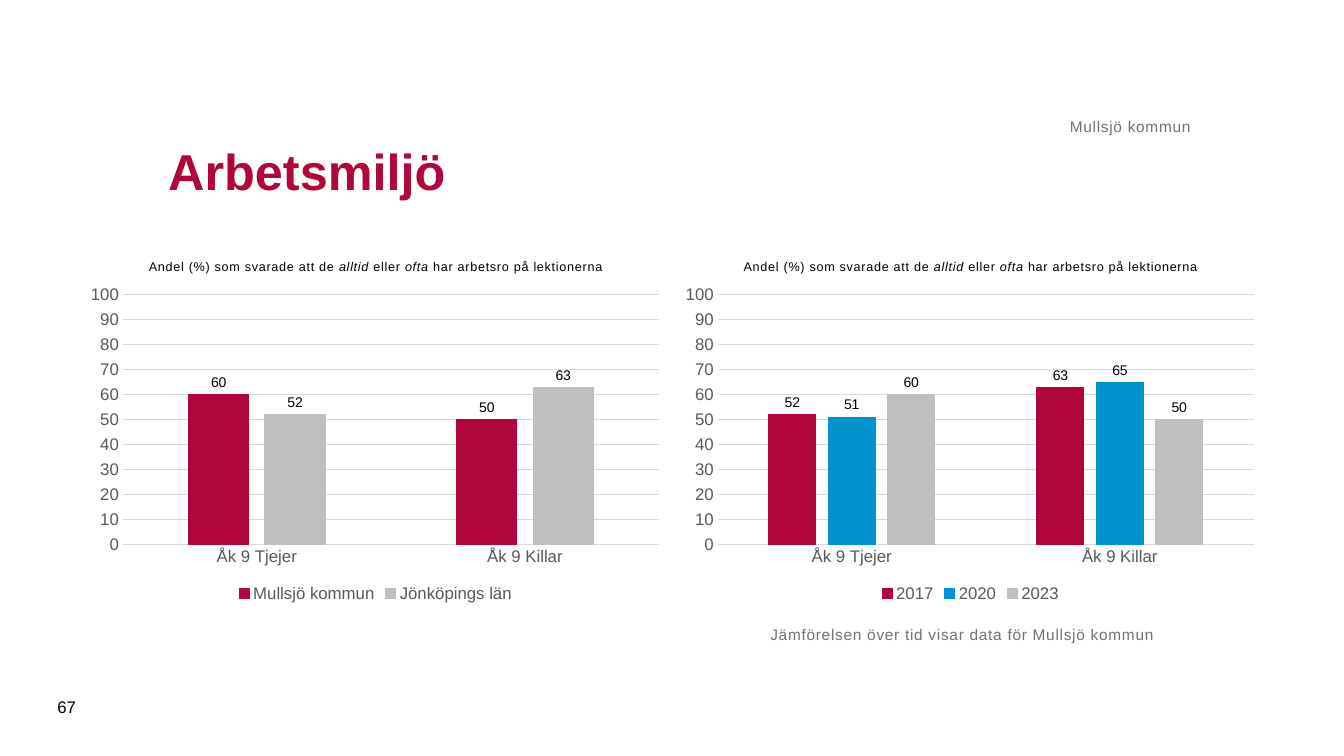
import pptx
import pptx.chart.data
import pptx.dml.color
import pptx.enum.chart
import pptx.enum.text
import pptx.oxml
import pptx.oxml.ns
import pptx.util

Inches, Pt = pptx.util.Inches, pptx.util.Pt
RGB = pptx.dml.color.RGBColor
ALIGN, ANCHOR = pptx.enum.text.PP_ALIGN, pptx.enum.text.MSO_ANCHOR
ENUM = pptx.enum.chart

RED = RGB(0xB1, 0x06, 0x3A)
BLUE = RGB(0x00, 0x93, 0xD0)
SILVER = RGB(0xBF, 0xBF, 0xBF)
GRID = RGB(0xD9, 0xD9, 0xD9)
LABEL = RGB(0x59, 0x59, 0x59)
NOTE = RGB(0x71, 0x71, 0x71)
BLACK = RGB(0, 0, 0)

GROUPS = ["Åk 9 Tjejer", "Åk 9 Killar"]
HEADING = [("Andel (%) som svarade att de ", False), ("alltid", True),
           (" eller ", False), ("ofta", True),
           (" har arbetsro på lektionerna", False)]
PLACES = [("Mullsjö kommun", (60, 50), RED), ("Jönköpings län", (52, 63), SILVER)]
YEARS = [("2017", (52, 63), RED), ("2020", (51, 65), BLUE), ("2023", (60, 50), SILVER)]
FORMAT = "#,##0;#,##0"
PLOT = {"x": 0.073, "y": 0.145, "w": 0.906, "h": 0.684}


def style(font, size, color, bold=False):
    font.name = "Arial"
    font.size = Pt(size)
    font.bold = bold
    font.color.rgb = color


def space(run):
    """Widen the letter spacing by half a point."""
    run._r.get_or_add_rPr().set("spc", "50")


def write(slide, box, text, size, color, bold=False, inset=True, wide=False,
          anchor=ANCHOR.MIDDLE, align=ALIGN.LEFT):
    frame = slide.shapes.add_textbox(*map(Inches, box)).text_frame
    frame.word_wrap = True
    frame.vertical_anchor = anchor
    if not inset:
        frame.margin_left = frame.margin_right = 0
        frame.margin_top = frame.margin_bottom = 0
    para = frame.paragraphs[0]
    para.alignment = align
    run = para.add_run()
    run.text = text
    style(para.font, size, color, bold)
    if wide:
        space(run)


def head(chart):
    chart.has_title = True
    chart.chart_title.include_in_layout = False
    para = chart.chart_title.text_frame.paragraphs[0]
    style(para.font, 9, BLACK)
    for text, slant in HEADING:
        run = para.add_run()
        run.text = text
        style(run.font, 9, BLACK)
        run.font.italic = slant
        space(run)


def fix_plot(chart):
    """Pin the inner plot area as shares of the chart."""
    area = chart._chartSpace.chart.plotArea
    for old in area.findall(pptx.oxml.ns.qn("c:layout")):
        area.remove(old)
    parts = "".join(f'<c:{key}Mode val="edge"/>' for key in "xy")
    parts += "".join(f'<c:{key} val="{val}"/>' for key, val in PLOT.items())
    area.insert(0, pptx.oxml.parse_xml(
        f'<c:layout {pptx.oxml.ns.nsdecls("c")}><c:manualLayout>'
        f'<c:layoutTarget val="inner"/>{parts}</c:manualLayout></c:layout>'))


def set_axes(chart):
    for axis in (chart.category_axis, chart.value_axis):
        axis.major_tick_mark = axis.minor_tick_mark = ENUM.XL_TICK_MARK.NONE
        style(axis.tick_labels.font, 12, LABEL)
    scale = chart.value_axis
    scale.minimum_scale, scale.maximum_scale, scale.major_unit = 0, 100, 10
    scale.tick_labels.number_format = FORMAT
    scale.tick_labels.number_format_is_linked = False
    scale.format.line.fill.background()
    for line in (chart.category_axis.format.line, scale.major_gridlines.format.line):
        line.color.rgb = GRID
        line.width = Pt(0.75)


def set_bars(plot, rows):
    plot.gap_width, plot.overlap = 219, -27
    plot.vary_by_categories = False
    for bar, (_, _, color) in zip(plot.series, rows):
        bar.format.fill.solid()
        bar.format.fill.fore_color.rgb = color
        bar.format.line.color.rgb = color
        bar.format.line.width = Pt(0.75)
        labels = bar.data_labels
        labels.show_value = True
        labels.position = ENUM.XL_LABEL_POSITION.OUTSIDE_END
        labels.number_format = FORMAT
        labels.number_format_is_linked = False
        style(labels.font, 10, BLACK)


def add_bars(slide, box, rows):
    data = pptx.chart.data.CategoryChartData()
    data.categories = GROUPS
    for name, values, _ in rows:
        data.add_series(name, values)
    chart = slide.shapes.add_chart(
        ENUM.XL_CHART_TYPE.COLUMN_CLUSTERED, *map(Inches, box), data).chart
    style(chart.font, 10, BLACK)
    head(chart)
    fix_plot(chart)
    set_axes(chart)
    set_bars(chart.plots[0], rows)
    chart.has_legend = True
    chart.legend.position = ENUM.XL_LEGEND_POSITION.BOTTOM
    chart.legend.include_in_layout = False
    style(chart.legend.font, 12, LABEL)


def main():
    deck = pptx.Presentation()
    deck.slide_width, deck.slide_height = Inches(13.33), Inches(7.5)
    slide = deck.slides.add_slide(deck.slide_layouts[6])
    for left, rows in ((0.79, PLACES), (6.69, YEARS)):
        add_bars(slide, (left, 2.4, 5.87, 3.62), rows)
    write(slide, (1.57, 0.98, 10.24, 1.42), "Arbetsmiljö", 36, RED, bold=True)
    write(slide, (7.64, 6.2, 5.31, 0.94),
          "Jämförelsen över tid visar data för Mullsjö kommun", 11, NOTE,
          inset=False, wide=True, anchor=ANCHOR.TOP)
    write(slide, (1.57, 0.62, 10.24, 0.73), "Mullsjö kommun", 11, NOTE,
          inset=False, wide=True, anchor=ANCHOR.BOTTOM, align=ALIGN.RIGHT)
    write(slide, (0.47, 6.81, 0.57, 0.4), "67", 12, BLACK)
    deck.save("out.pptx")


if __name__ == "__main__":
    main()
